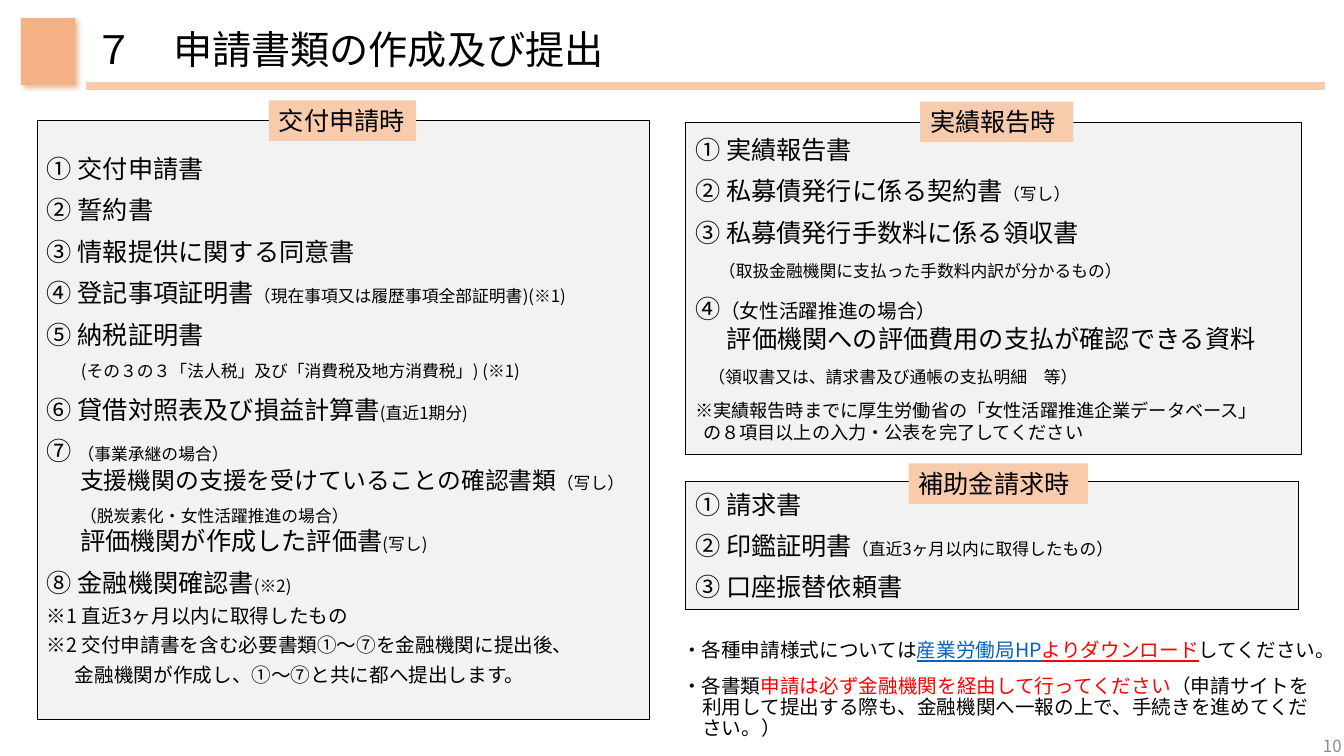
from copy import deepcopy
from lxml import etree
from pptx import Presentation
from pptx.dml.color import RGBColor
from pptx.enum.shapes import MSO_CONNECTOR, MSO_SHAPE
from pptx.enum.text import MSO_ANCHOR, PP_ALIGN
from pptx.oxml.ns import qn
from pptx.util import Cm, Pt

RECT = MSO_SHAPE.RECTANGLE
LINE = MSO_CONNECTOR.STRAIGHT
MID, TOP = MSO_ANCHOR.MIDDLE, MSO_ANCHOR.TOP
LEFT, RIGHT = PP_ALIGN.LEFT, PP_ALIGN.RIGHT
FONT = "Noto Sans CJK JP"
HEX = {"text": "000000", "gray": "8C8C8C", "red": "FF0000", "link": "0563C1",
       "panel": "F2F2F2", "tag": "F8CBAD", "mark": "F4B183", "shade": "C55A11"}
HANG = 0.8  # width of a circled number and its space


def color(name):
    return RGBColor.from_string(HEX[name])


def para(*runs, left=HANG, hang=HANG, before=5, after=3):
    """A run is (text, size[, colour[, underline]]); "\n" is a line break."""
    return runs, left, hang, before, after


def note(*runs, left=0, hang=0):
    return para(*runs, left=left, hang=hang, before=2, after=2)


def plain(text, size, tone="text"):
    return para((text, size, tone), left=0, hang=0, before=0, after=0)


def style(run, size, tone="text", under=False):
    font = run.font
    font.size, font.name = Pt(size), FONT
    font.color.rgb = color(tone)
    if under:
        font.underline = True
    east = etree.SubElement(run._r.rPr, qn("a:ea"))
    east.set("typeface", FONT)


def write(shape, paras, anchor=MID, align=LEFT, pitch=None):
    frame = shape.text_frame
    frame.word_wrap = True
    frame.vertical_anchor = anchor
    for i, (runs, left, hang, before, after) in enumerate(paras):
        p = frame.add_paragraph() if i else frame.paragraphs[0]
        p.alignment = align
        p.space_before = Pt(before if i else 0)
        p.space_after = Pt(after)
        if pitch:
            p.line_spacing = pitch
        props = p._p.get_or_add_pPr()
        props.set("marL", str(Cm(left)))
        props.set("indent", str(-Cm(hang)))
        for item in runs:
            if item == "\n":
                p.add_line_break()
                p._p[-1].append(deepcopy(run._r.rPr))
            else:
                run = p.add_run()
                run.text = item[0]
                style(run, *item[1:])


def block(slide, box, fill, edge=False):
    shape = slide.shapes.add_shape(RECT, *map(Cm, box))
    shape.shadow.inherit = False
    shape.fill.solid()
    shape.fill.fore_color.rgb = color(fill)
    if edge:
        shape.line.color.rgb = color("text")
        shape.line.width = Pt(0.5)
    else:
        shape.line.fill.background()
    return shape


def label(slide, box, paras, **opts):
    write(slide.shapes.add_textbox(*map(Cm, box)), paras, **opts)


def header(slide, box, title):
    x, y, w, h = box
    # Square with a soft shadow
    mark = block(slide, (x, y, 1.37, h), "mark")
    glow = etree.SubElement(mark._element.spPr.find(qn("a:effectLst")), qn("a:outerShdw"),
                            blurRad=str(Pt(4)), dist=str(Pt(3)), dir="2700000",
                            algn="tl", rotWithShape="0")
    tint = etree.SubElement(glow, qn("a:srgbClr"), val=HEX["shade"])
    etree.SubElement(tint, qn("a:alpha"), val="40000")
    # Title and rule
    label(slide, (x + 1.61, y - 0.2, w - 1.61, 1.93), [plain(title, 28)])
    level = Cm(y + h + 0.02)
    rule = slide.shapes.add_connector(LINE, Cm(x + 1.63), level, Cm(x + w), level)
    rule.line.color.rgb = color("tag")
    rule.line.width = Pt(5.5)
    etree.SubElement(rule._element.spPr, qn("a:effectLst"))


def panel(slide, box, name, tag, paras):
    """Bordered list with a tag (offset, rise, width) across its top edge."""
    x, y, w, h = box
    shift, rise, wide = tag
    write(block(slide, box, "panel", True), paras)
    write(block(slide, (x + shift, y - rise, wide, 1.02), "tag"), [plain(name, 18)], TOP)


APPLY = [
    para(("① 交付申請書", 18)),
    para(("② 誓約書", 18)),
    para(("③ 情報提供に関する同意書", 18)),
    para(("④ 登記事項証明書", 18), ("（現在事項又は履歴事項全部証明書)(※1)", 12)),
    para(("⑤ 納税証明書", 18)),
    para(("(その３の３「法人税」及び「消費税及地方消費税」) (※1)", 12),
         left=0.86, hang=0, before=4.9, after=4.6),
    para(("⑥ 貸借対照表及び損益計算書", 18), ("(直近1期分)", 12)),
    para(("⑦ ", 18), ("（事業承継の場合）", 12), "\n",
         ("支援機関の支援を受けていることの確認書類", 17), ("（写し）", 12), left=0.84, hang=0.84),
    para(("（脱炭素化・女性活躍推進の場合）", 12), "\n",
         ("評価機関が作成した評価書", 18), ("(写し)", 12), left=0.84, hang=0),
    para(("⑧ 金融機関確認書", 18), ("(※2)", 12)),
    note(("※1 直近3ヶ月以内に取得したもの", 14)),
    note(("※2 交付申請書を含む必要書類①～⑦を金融機関に提出後、", 14)),
    note(("金融機関が作成し、①～⑦と共に都へ提出します。", 14), left=0.71),
]
REPORT = [
    para(("① 実績報告書", 18)),
    para(("② 私募債発行に係る契約書", 18), ("（写し）", 12)),
    para(("③ 私募債発行手数料に係る領収書", 18)),
    para(("（取扱金融機関に支払った手数料内訳が分かるもの）", 12),
         left=0.6, hang=0, before=6.6, after=3.6),
    para(("④", 18), ("（女性活躍推進の場合）", 14), "\n",
         ("評価機関への評価費用の支払が確認できる資料", 18)),
    para(("（領収書又は、請求書及び通帳の支払明細　等）", 12),
         left=0.33, hang=0, before=6.6, after=3.6),
    para(("※実績報告時までに厚生労働省の「女性活躍推進企業データベース」", 13), "\n",
         ("の８項目以上の入力・公表を完了してください", 13), left=0.2, hang=0.2),
]
CLAIM = [
    para(("① 請求書", 18)),
    para(("② 印鑑証明書", 18), ("（直近3ヶ月以内に取得したもの）", 12)),
    para(("③ 口座振替依頼書", 18)),
]
TIPS = [
    para(("・各種申請様式については", 14), ("産業労働局HP", 14, "link", True),
         ("よりダウンロード", 14, "red", True), ("してください。", 14),
         left=0.51, hang=0.51, before=10, after=0),
    para(("・各書類", 14), ("申請は必ず金融機関を経由して行ってください", 14, "red"),
         ("（申請サイトを利用して提出する際も、金融機関へ一報の上で、手続きを進めてください。）", 14),
         left=0.51, hang=0.51, before=10, after=0),
]


def main():
    deck = Presentation()
    deck.slide_width, deck.slide_height = Cm(33.87), Cm(19.05)
    slide = deck.slides.add_slide(deck.slide_layouts[6])
    header(slide, (0.53, 0.46, 32.85, 1.68), "７　申請書類の作成及び提出")
    # Lists of papers
    panel(slide, (0.93, 3.03, 15.44, 15.09), "交付申請時", (5.85, 0.5, 3.71), APPLY)
    panel(slide, (17.27, 3.08, 15.52, 8.38), "実績報告時", (5.92, 0.52, 3.86), REPORT)
    panel(slide, (17.27, 12.13, 15.44, 3.23), "補助金請求時", (5.63, 0.45, 4.52), CLAIM)
    # Closing notes and page number
    label(slide, (16.94, 16.01, 16.64, 2.77), TIPS, pitch=0.9)
    label(slide, (26.44, 18.29, 7.62, 1.02), [plain("10", 12, "gray")], align=RIGHT)
    deck.save("out.pptx")


if __name__ == "__main__":
    main()
